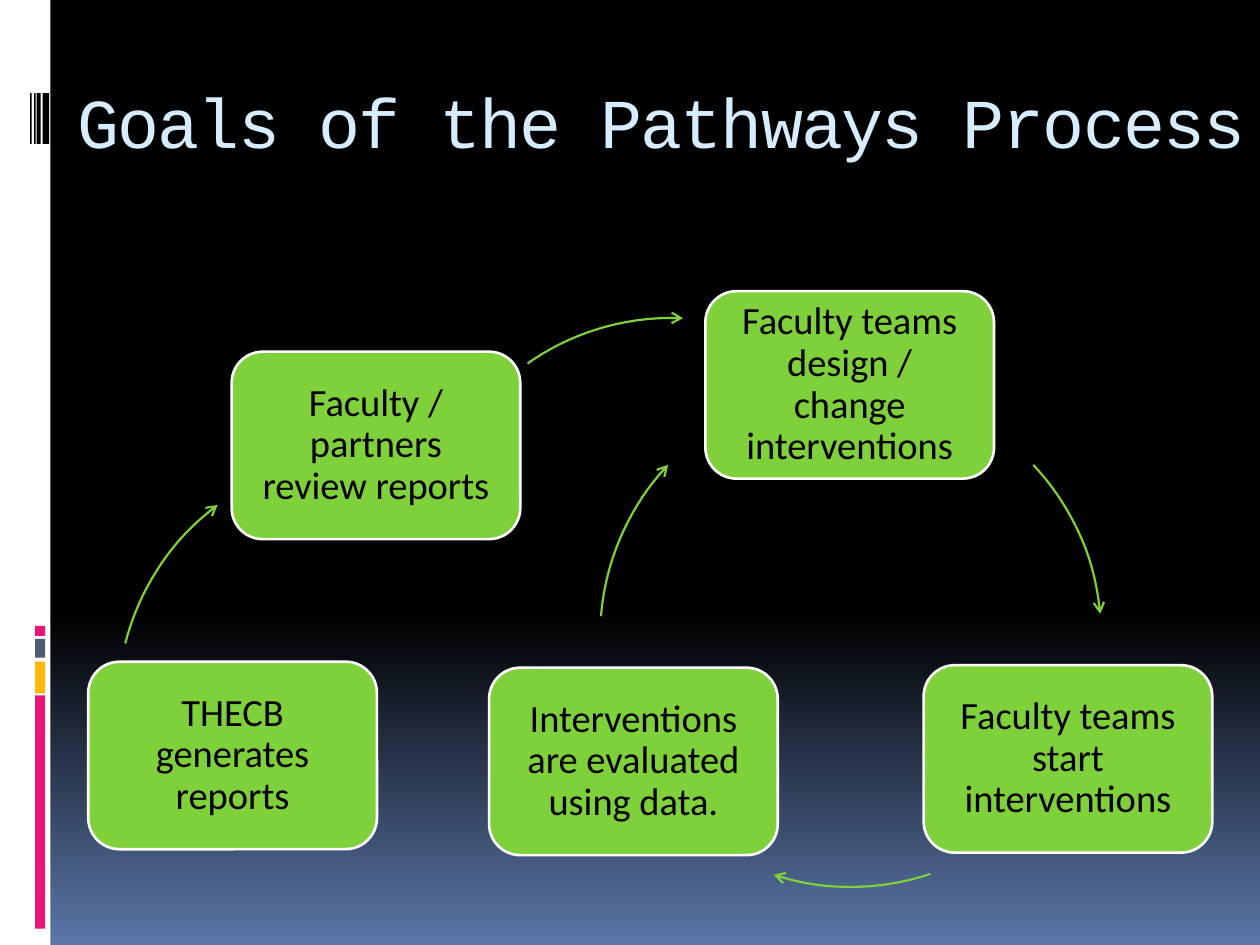
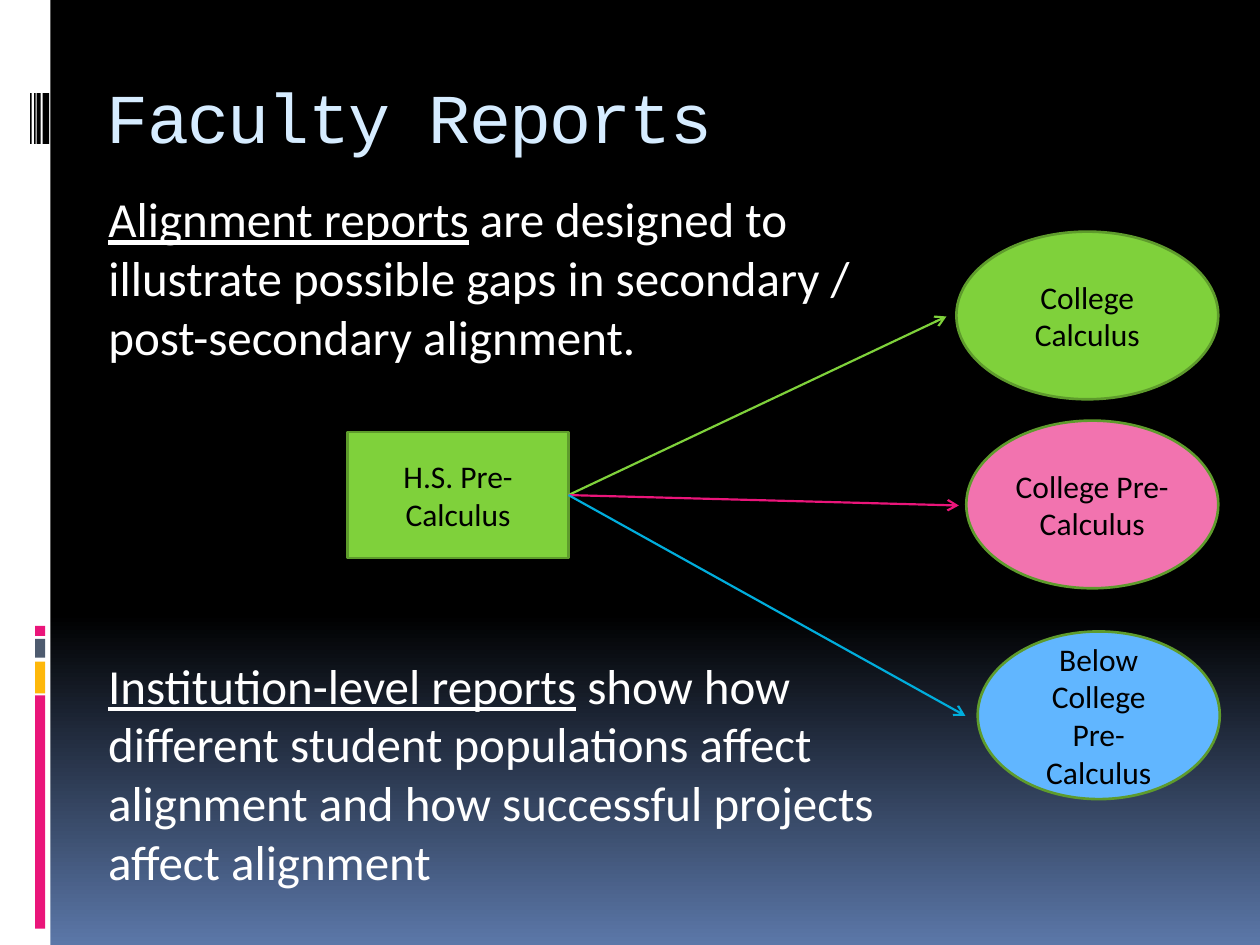
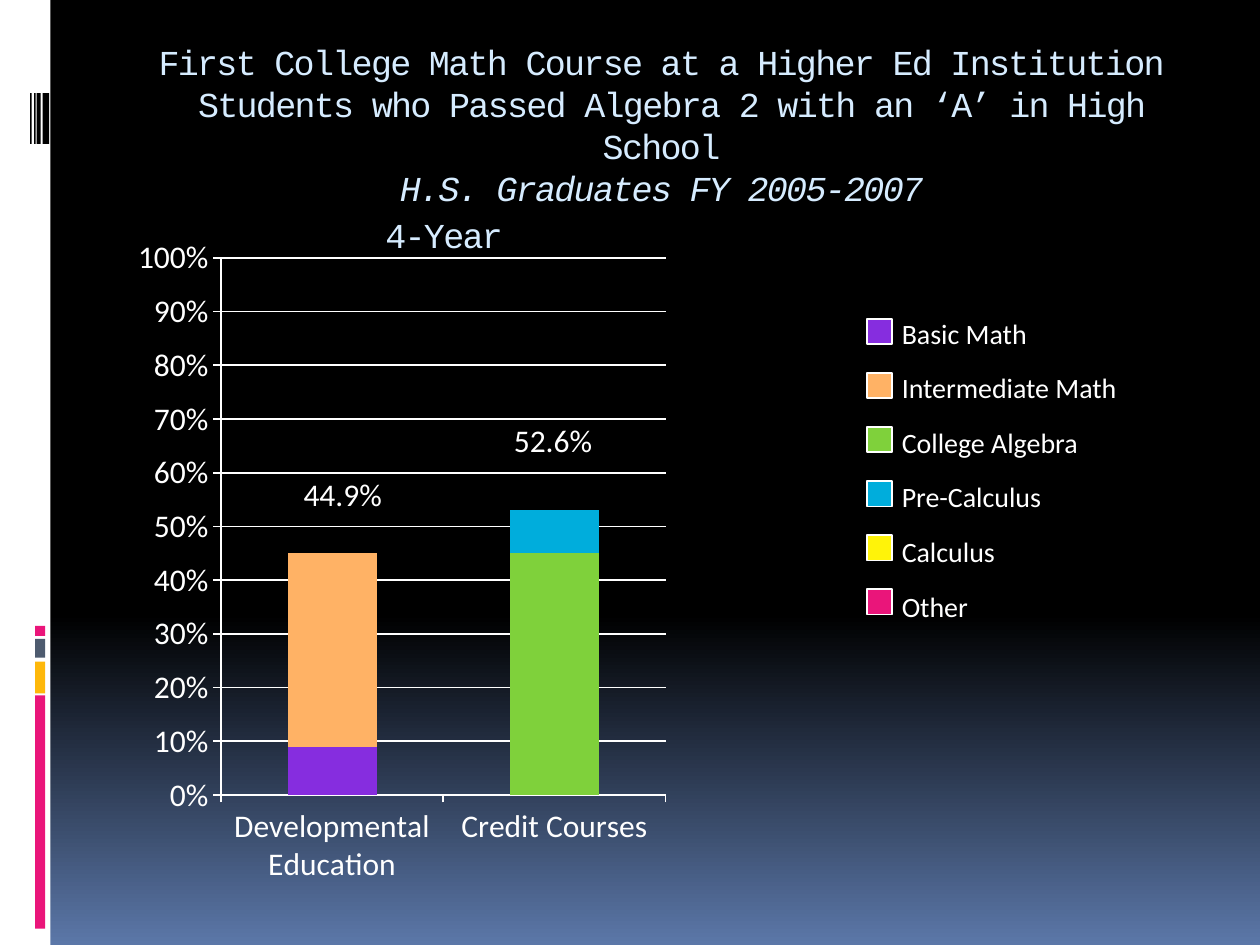
import dataclasses

import lxml.etree
import pptx
import pptx.chart.data
import pptx.dml.color
import pptx.enum.chart
import pptx.enum.shapes
import pptx.enum.text
import pptx.oxml
import pptx.oxml.ns
import pptx.util

Cm = pptx.util.Cm
Pt = pptx.util.Pt
SHAPE = pptx.enum.shapes.MSO_SHAPE
ALIGN = pptx.enum.text.PP_ALIGN
ANCHOR = pptx.enum.text.MSO_ANCHOR
qn = pptx.oxml.ns.qn


@dataclasses.dataclass(frozen=True)
class Theme:
    heading_font: str = "Courier New"
    text_font: str = "Calibri"
    black: str = "000000"
    white: str = "FFFFFF"
    dusk: str = "5B77A8"
    heading: str = "D6ECFF"
    green: str = "7FD13B"
    dark_green: str = "5E9B2C"
    magenta: str = "EA157A"
    pink: str = "F273AF"
    amber: str = "FEB80A"
    slate: str = "4E5B6F"
    cyan: str = "00ADDC"
    sky: str = "61B6FF"
    purple: str = "862DDF"
    orange: str = "FFB265"
    yellow: str = "FFF309"
    title_size: int = 40
    body_size: int = 28
    step_size: int = 22
    subtitle_size: int = 20
    label_size: int = 18
    legend_size: int = 16


THEME = Theme()


def rgb(color):
    return pptx.dml.color.RGBColor.from_string(color)


def box(left, top, width, height):
    return Cm(left), Cm(top), Cm(width), Cm(height)


class Deck:
    """Holds the style and the current slide."""

    def __init__(self, theme):
        self.theme = theme
        self.presentation = pptx.Presentation()
        self.presentation.slide_width = Cm(25.4)
        self.presentation.slide_height = Cm(19.05)
        self.slide = None
        self.set_background()

    # Shared background and bands
    def set_background(self):
        stops = ((0, self.theme.black), (65, self.theme.black), (100, self.theme.dusk))
        stop_xml = "".join(
            f'<a:gs pos="{position * 1000}"><a:srgbClr val="{color}"/></a:gs>'
            for position, color in stops)
        background = pptx.oxml.parse_xml(
            f'<p:bg {pptx.oxml.ns.nsdecls("p", "a")}><p:bgPr><a:gradFill rotWithShape="1">'
            f'<a:gsLst>{stop_xml}</a:gsLst><a:lin ang="5400000" scaled="0"/></a:gradFill>'
            '<a:effectLst/></p:bgPr></p:bg>')
        common = self.presentation.slide_master.element.cSld
        for old in common.findall(qn("p:bg")):
            common.remove(old)
        common.insert(0, background)

    def add_bands(self):
        theme = self.theme
        self.shape(SHAPE.RECTANGLE, (0, 0, 1.02, 19.05), theme.white)
        for top, height, color in ((14.02, 4.7, theme.magenta), (13.34, 0.64, theme.amber),
                                   (12.88, 0.38, theme.slate), (12.62, 0.2, theme.magenta)):
            self.shape(SHAPE.RECTANGLE, (0.71, top, 0.2, height), color)
        for left, width in ((0.86, 0.13), (0.74, 0.08), (0.69, 0.03), (0.61, 0.03)):
            self.shape(SHAPE.RECTANGLE, (left, 1.88, width, 1.02), theme.black)

    def new_slide(self, layout_index):
        layout = self.presentation.slide_layouts[layout_index]
        self.slide = self.presentation.slides.add_slide(layout)
        self.add_bands()

    # Text
    def style(self, paragraph, size, color, font=None, align=None):
        paragraph.font.name = font or self.theme.text_font
        paragraph.font.size = Pt(size)
        paragraph.font.color.rgb = rgb(color)
        paragraph.alignment = align

    def style_heading(self, paragraph, size, align):
        self.style(paragraph, size, self.theme.heading, self.theme.heading_font, align)
        paragraph.font._element.set("spc", "-100")

    def title(self, place, text, size, align=ALIGN.LEFT, italic_end=""):
        title = self.slide.shapes.title
        title.left, title.top, title.width, title.height = box(*place)
        frame = title.text_frame
        frame.auto_size = pptx.enum.text.MSO_AUTO_SIZE.NONE
        frame.vertical_anchor = ANCHOR.TOP
        frame.text = text
        paragraph = frame.paragraphs[0]
        self.style_heading(paragraph, size, align)
        if italic_end:
            run = paragraph.add_run()
            run.text = italic_end
            run.font.italic = True

    def text_box(self, place):
        frame = self.slide.shapes.add_textbox(*box(*place)).text_frame
        frame.word_wrap = True
        return frame

    def subtitle(self, place, text):
        paragraph = self.text_box(place).paragraphs[0]
        paragraph.text = text
        self.style_heading(paragraph, self.theme.subtitle_size, ALIGN.CENTER)

    def labels(self, place, lines, size, space_before=0):
        frame = self.text_box(place)
        frame.text = "\n".join(lines)
        for paragraph in frame.paragraphs:
            self.style(paragraph, size, self.theme.white)
            paragraph.space_before = Pt(space_before)

    def body(self, place):
        body = self.slide.placeholders[1]
        body.left, body.top, body.width, body.height = box(*place)
        body.text_frame.auto_size = pptx.enum.text.MSO_AUTO_SIZE.NONE
        return body.text_frame

    def statement(self, frame, term, rest):
        paragraph = frame.paragraphs[0]
        for text in (term, rest):
            paragraph.add_run().text = text
        paragraph.runs[0].font.underline = True
        self.style(paragraph, self.theme.body_size, self.theme.white)
        paragraph.space_before = Pt(7)
        properties = paragraph._p.get_or_add_pPr()
        properties.set("marL", str(Cm(0.18)))
        properties.set("indent", "0")
        bullet = pptx.oxml.parse_xml(f'<a:buNone {pptx.oxml.ns.nsdecls("a")}/>')
        properties.find(qn("a:defRPr")).addprevious(bullet)

    # Shapes and lines
    def shape(self, kind, place, fill, line=None, width=1.5):
        shape = self.slide.shapes.add_shape(kind, *box(*place))
        shape.shadow.inherit = False
        if fill:
            shape.fill.solid()
            shape.fill.fore_color.rgb = rgb(fill)
        else:
            shape.fill.background()
        if line:
            shape.line.color.rgb = rgb(line)
            shape.line.width = Pt(width)
        else:
            shape.line.fill.background()
        return shape

    def node(self, kind, place, text, fill, line, size):
        shape = self.shape(kind, place, fill, line)
        frame = shape.text_frame
        frame.word_wrap = True
        frame.vertical_anchor = ANCHOR.MIDDLE
        frame.text = text
        self.style(frame.paragraphs[0], size, self.theme.black, align=ALIGN.CENTER)
        return shape

    def step(self, left, top, text):
        shape = self.node(SHAPE.ROUNDED_RECTANGLE, (left, top, 5.82, 3.78), text,
                          self.theme.green, self.theme.white, self.theme.step_size)
        frame = shape.text_frame
        frame.margin_left = frame.margin_right = Cm(0.41)
        frame.margin_top = frame.margin_bottom = Cm(0.41)
        frame.paragraphs[0].line_spacing = 0.9

    def arrowhead(self, shape):
        lxml.etree.SubElement(shape.line._get_or_add_ln(), qn("a:tailEnd"), type="arrow")

    def arc_arrow(self, center_x, center_y, start, end, radius=5.05):
        place = (center_x - radius, center_y - radius, 2 * radius, 2 * radius)
        arc = self.shape(SHAPE.ARC, place, None, self.theme.green, 1.25)
        # Adjustments count 100000ths, angles count 60000ths of a degree
        arc.adjustments[0] = start * 0.6
        arc.adjustments[1] = end * 0.6
        self.arrowhead(arc)

    def arrow_from(self, source, end_x, end_y, color):
        connector = self.slide.shapes.add_connector(
            pptx.enum.shapes.MSO_CONNECTOR.STRAIGHT,
            source.left + source.width, source.top + source.height // 2,
            Cm(end_x), Cm(end_y))
        connector.begin_connect(source, 3)
        connector.line.color.rgb = rgb(color)
        connector.line.width = Pt(1.25)
        self.arrowhead(connector)
        lxml.etree.SubElement(connector._element.spPr, qn("a:effectLst"))

    # Chart
    def stacked_chart(self, place, categories, series_rows):
        data = pptx.chart.data.CategoryChartData(number_format="0%")
        data.categories = categories
        for number, (values, _, _) in enumerate(series_rows, 1):
            data.add_series(f"Series {number}", values)
        chart = self.slide.shapes.add_chart(
            pptx.enum.chart.XL_CHART_TYPE.COLUMN_STACKED, *box(*place), data).chart
        chart.has_legend = False
        chart.has_title = False
        chart.font.name = self.theme.text_font
        chart.font.size = Pt(self.theme.label_size)
        chart.font.color.rgb = rgb(self.theme.white)

        plot = chart.plots[0]
        plot.gap_width = 150
        plot.overlap = 100
        plot.vary_by_categories = False
        for series, (_, color, point_colors) in zip(plot.series, series_rows):
            series.format.fill.solid()
            series.format.fill.fore_color.rgb = rgb(color)
            for index, point_color in point_colors.items():
                fill = series.points[index].format.fill
                fill.solid()
                fill.fore_color.rgb = rgb(point_color)

        value_axis = chart.value_axis
        value_axis.minimum_scale = 0
        value_axis.maximum_scale = 1
        value_axis.major_unit = 0.1
        value_axis.has_major_gridlines = True
        value_axis.tick_labels.number_format = "0%"
        value_axis.tick_labels.number_format_is_linked = False
        for axis in (chart.category_axis, value_axis):
            axis.major_tick_mark = pptx.enum.chart.XL_TICK_MARK.OUTSIDE
        for part in (chart.category_axis, value_axis, value_axis.major_gridlines):
            part.format.line.color.rgb = rgb(self.theme.white)
            part.format.line.width = Pt(1)
        self.fix_plot_area(chart, x=0.17, y=0.05, w=0.81, h=0.8)

    def fix_plot_area(self, chart, **fractions):
        plot_area = chart._chartSpace.chart.plotArea
        for old in plot_area.findall(qn("c:layout")):
            plot_area.remove(old)
        layout = pptx.oxml.parse_xml(
            f'<c:layout {pptx.oxml.ns.nsdecls("c")}><c:manualLayout>'
            '<c:layoutTarget val="inner"/><c:xMode val="edge"/><c:yMode val="edge"/>'
            + "".join(f'<c:{key} val="{value}"/>' for key, value in fractions.items())
            + '</c:manualLayout></c:layout>')
        plot_area.insert(0, layout)


def goals_slide(deck):
    deck.new_slide(5)
    deck.title((1.3, 1.45, 24.1, 2.54), "Goals of the Pathways Process", THEME.title_size)
    for left, top, text in (
            (14.22, 5.87, "Faculty teams design / change interventions"),
            (18.62, 13.41, "Faculty teams start interventions"),
            (9.86, 13.46, "Interventions are evaluated using data."),
            (1.78, 13.34, "THECB generates reports"),
            (4.67, 7.09, "Faculty / partners review reports")):
        deck.step(left, top, text)
    cycle_center = (17.15, 12.83)
    for start, end in ((316.8, 354.8), (71.5, 107.9), (184.6, 223.2)):
        deck.arc_arrow(*cycle_center, start, end)
    deck.arc_arrow(13.54, 11.46, 234.9, 272.6)
    deck.arc_arrow(7.42, 14.22, 194.3, 233.1)


def reports_slide(deck):
    deck.new_slide(1)
    deck.title((1.9, 1.35, 20, 2.54), "Faculty Reports", THEME.title_size)
    deck.statement(deck.body((1.75, 3.68, 16.1, 4.37)), "Alignment reports",
                   " are designed to illustrate possible gaps in secondary / "
                   "post-secondary alignment.")
    high_school = deck.node(SHAPE.RECTANGLE, (7.01, 8.71, 4.45, 2.54), "H.S. Pre-Calculus",
                            THEME.green, THEME.dark_green, THEME.label_size)
    # Courses: ellipse left, top and width, then arrow end
    for text, left, top, width, fill, end_x, end_y, color in (
            ("College Calculus", 19.28, 4.67, 5.28, THEME.green, 19.08, 6.38, THEME.green),
            ("College Pre-Calculus", 19.48, 8.48, 5.08, THEME.pink, 19.33, 10.19, THEME.magenta),
            ("Below College Pre-Calculus", 19.71, 12.73, 4.88, THEME.sky,
             19.46, 14.43, THEME.cyan)):
        deck.node(SHAPE.OVAL, (left, top, width, 3.38), text, fill,
                  THEME.dark_green, THEME.label_size)
        deck.arrow_from(high_school, end_x, end_y, color)
    deck.statement(deck.text_box((1.75, 13.08, 16.43, 5.28)), "Institution-level reports",
                   " show how different student populations affect alignment and how "
                   "successful projects affect alignment")


def first_course_slide(deck):
    deck.new_slide(5)
    deck.title((2.54, 0.69, 21.59, 2.54),
               "First College Math Course at a Higher Ed Institution\v"
               " Students who Passed Algebra 2 with an ‘A’ in High School\v",
               THEME.subtitle_size, ALIGN.CENTER, "H.S. Graduates FY 2005-2007")
    deck.stacked_chart(
        (2.57, 4.52, 11.07, 13.54), ("Developmental Education", "Credit Courses"),
        (((0.09, 0.45), THEME.green, {0: THEME.purple}),
         ((0.36, 0.08), THEME.cyan, {0: THEME.orange}),
         ((0, 0), THEME.amber, {1: THEME.yellow}),
         ((0, 0), THEME.cyan, {1: THEME.magenta})))
    deck.subtitle((6.48, 4.17, 4.95, 0.91), "4-Year")

    # Legend
    courses = {"Basic Math": THEME.purple, "Intermediate Math": THEME.orange,
               "College Algebra": THEME.green, "Pre-Calculus": THEME.cyan,
               "Calculus": THEME.yellow, "Other": THEME.magenta}
    for row, color in enumerate(courses.values()):
        deck.shape(SHAPE.RECTANGLE, (17.48, 6.43 + row * 1.09, 0.51, 0.51),
                   color, THEME.white, 1)
    deck.labels((17.93, 6.25, 6.17, 6.5), courses, THEME.legend_size, space_before=12)

    # Column totals
    for left, top, total in ((5.87, 9.45, "44.9%"), (10.11, 8.36, "52.6%")):
        deck.labels((left, top, 2.26, 1.02), [total], THEME.label_size)


def main():
    deck = Deck(THEME)
    goals_slide(deck)
    reports_slide(deck)
    first_course_slide(deck)
    deck.presentation.save("out.pptx")


if __name__ == "__main__":
    main()
